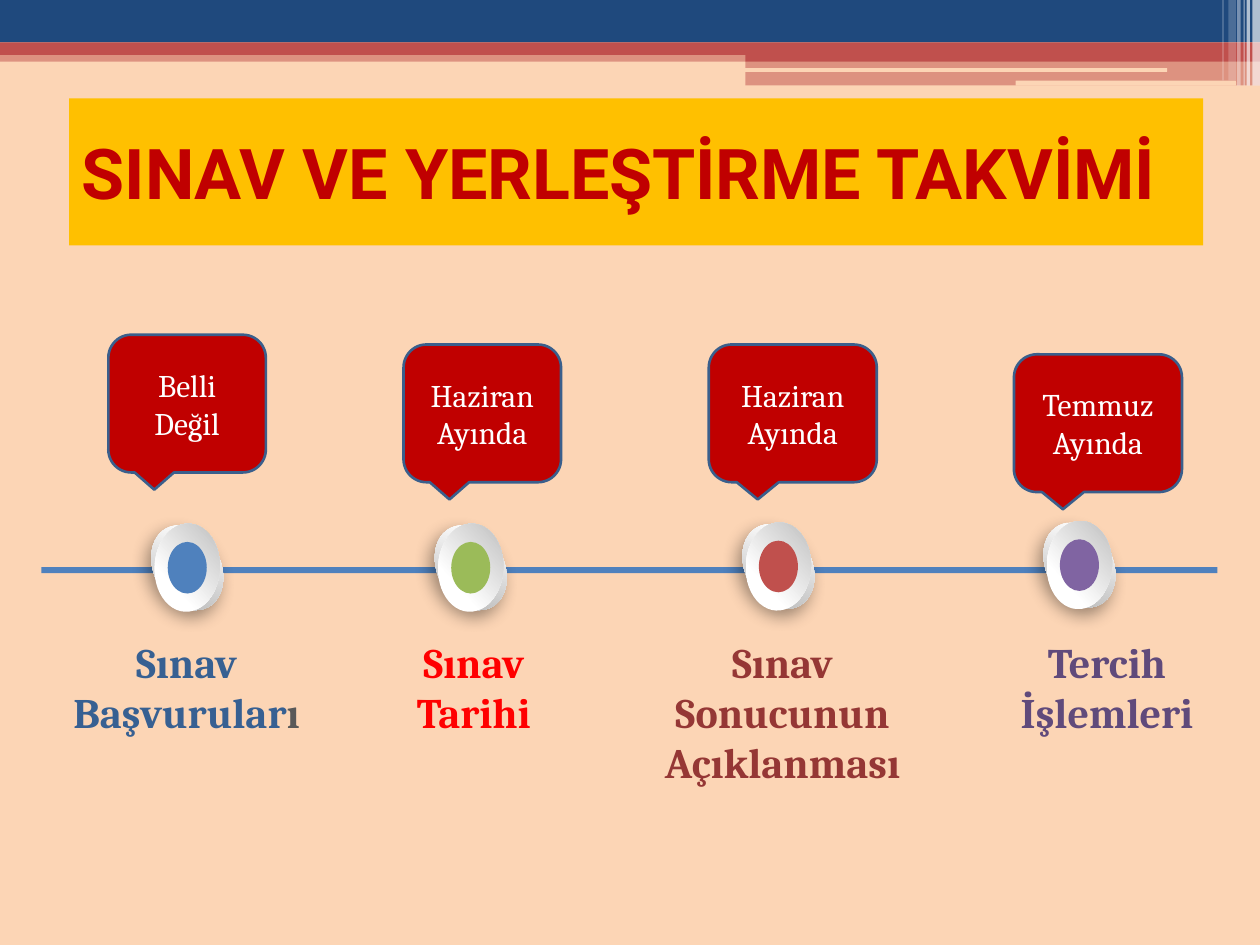
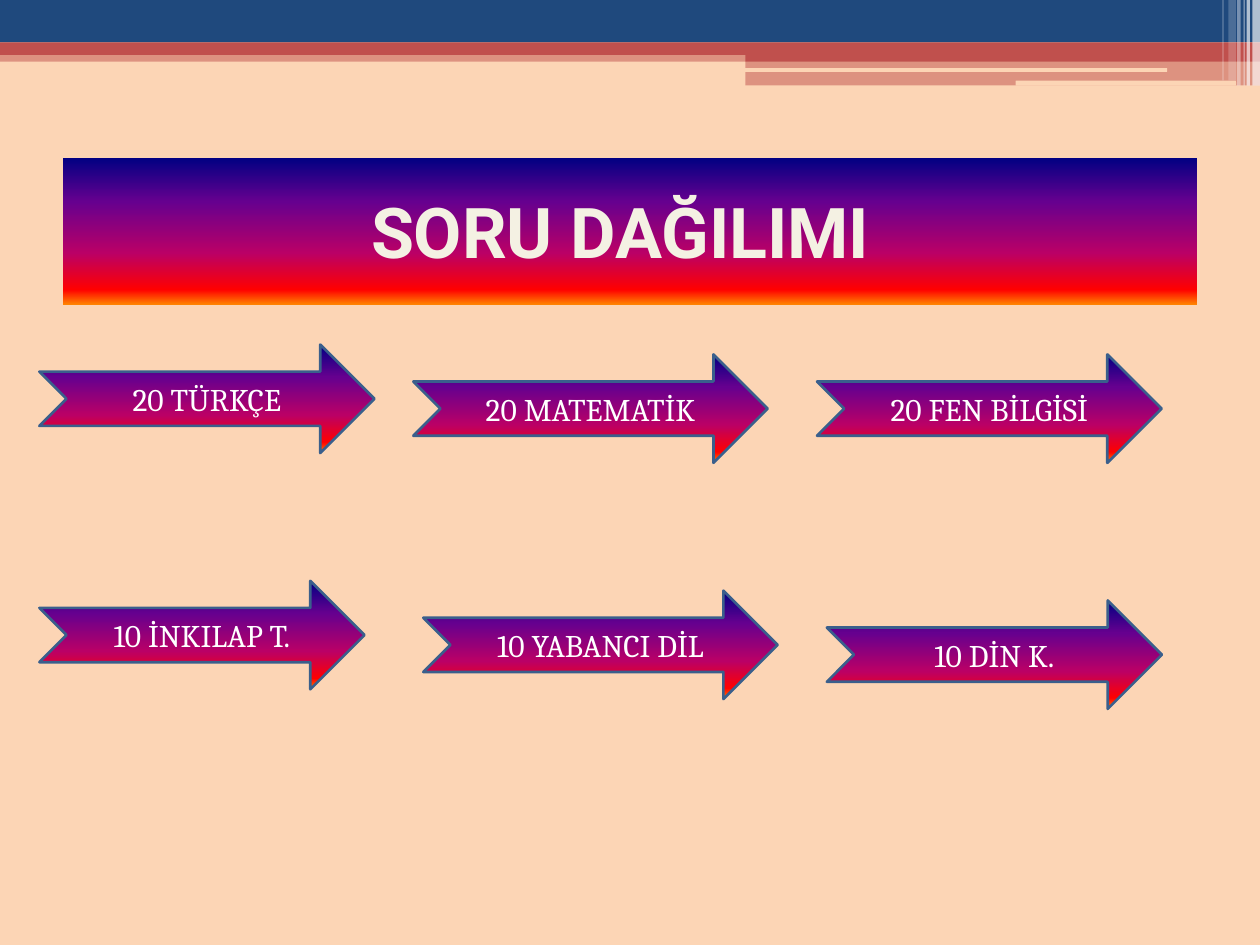
from lxml.etree import SubElement
from pptx import Presentation
from pptx.dml.color import RGBColor
from pptx.enum.shapes import MSO_SHAPE
from pptx.enum.text import MSO_ANCHOR, MSO_AUTO_SIZE, PP_ALIGN
from pptx.oxml.ns import qn
from pptx.util import Pt

RECT, ROUND = MSO_SHAPE.RECTANGLE, MSO_SHAPE.ROUNDED_RECTANGLE
OVAL = MSO_SHAPE.OVAL
CALL = MSO_SHAPE.ROUNDED_RECTANGULAR_CALLOUT
ARROW = MSO_SHAPE.NOTCHED_RIGHT_ARROW
LEFT, CENTER = PP_ALIGN.LEFT, PP_ALIGN.CENTER
MIDDLE, GROW = MSO_ANCHOR.MIDDLE, MSO_AUTO_SIZE.SHAPE_TO_FIT_TEXT

PEACH, NAVY, BRICK, WHITE = "FCD5B5", "1F497D", "C0504D", "FFFFFF"
BLUE, EDGE, RED, GOLD = "4F81BD", "3A5F8C", "C00000", "FFC000"
SUNSET = [(0, "000082"), (30, "66008F"), (65, "BA0066"),
          (90, "FF0000"), (100, "FF8200")]


def tint(item, hue, angle=90):
    """Fill a shape, line, font or background: a hex string or a list of stops."""
    if isinstance(hue, str):
        item.fill.solid()
        item.fill.fore_color.rgb = RGBColor.from_string(hue)
        return
    item.fill.gradient()
    item.fill.gradient_angle = 360 - angle
    stops = item.element.spPr.find(qn("a:gradFill")).find(qn("a:gsLst"))
    for old in list(stops):
        stops.remove(old)
    for spot, code in hue:
        stop = SubElement(stops, qn("a:gs"), pos=str(spot * 1000))
        SubElement(stop, qn("a:srgbClr"), val=code)


def plate(shapes, kind, box, hue, angle=90):
    """Add a filled shape without line or shadow."""
    shape = shapes.add_shape(kind, *[Pt(n) for n in box])
    shape.shadow.inherit = False
    shape.line.fill.background()
    tint(shape, hue, angle)
    return shape


prs = Presentation()
prs.slide_width, prs.slide_height = Pt(720), Pt(540)
master = prs.slide_master
tint(master.background, PEACH)
dates, topics = [prs.slides.add_slide(prs.slide_layouts[5]) for _ in range(2)]

# Bands at the top, moved to the master so that both slides share them
bands = [
    (RECT, (0, 28.8, 720, 6.5), BRICK, 50),
    (RECT, (0, 0, 720, 24.2), NAVY, 100),
    (RECT, (0, 24.2, 720, 7.2), BRICK, 100),
    (RECT, (426, 28.1, 294, 7.2), BRICK, 100),
    (RECT, (426, 35.3, 294, 13.5), BRICK, 50),
    (ROUND, (425.5, 38.9, 241.5, 2.2), PEACH, 100),
    (ROUND, (580.3, 46.1, 126, 2.9), PEACH, 100),
]
for left, width, height, alpha in [
        (715.7, 4.3, 49, 65), (712.3, 2, 49, 65), (710.6, 0.7, 49, 60),
        (707, 2, 49, 40), (702, 4.3, 46, 20), (698.5, 0.7, 46, 30)]:
    bands.append((RECT, (left, 0, width, height), WHITE, alpha))
for i, (kind, box, hue, alpha) in enumerate(bands):
    band = plate(dates.shapes, kind, box, hue)
    if alpha < 100:
        color = band.element.spPr.find(qn("a:solidFill"))[0]
        SubElement(color, qn("a:alpha"), val=str(alpha * 1000))
    band.element.nvSpPr.cNvPr.set("id", str(20 + i))
    master.shapes.element.insert(2 + i, band.element)

# Titles
for slide, text, left, top, inset, hue, ink in [
        (dates, "SINAV VE YERLEŞTİRME TAKVİMİ", 39.5, 56.2, 7.2, GOLD, RED),
        (topics, "SORU DAĞILIMI", 36, 90, 176, SUNSET, "F4F1E3")]:
    title = slide.shapes.title
    title.left, title.top = Pt(left), Pt(top)
    title.width, title.height = Pt(648), Pt(84)
    tint(title, hue)
    frame = title.text_frame
    frame.text, frame.margin_left = text, Pt(inset)
    frame.vertical_anchor = MIDDLE
    para = frame.paragraphs[0]
    para.alignment = LEFT
    para.font.name, para.font.size, para.font.bold = "Roboto", Pt(40), True
    tint(para.font, ink)

# Time line with its markers
plate(dates.shapes, RECT, (23.7, 324, 672, 3.5), BLUE)
for x, y, hue in [(107, 324.4, BLUE), (269, 324.4, "9BBB59"),
                  (444.8, 323.7, BRICK), (616.8, 322.9, "8064A2")]:
    mark = dates.shapes.add_group_shape().shapes
    discs = []
    for wide, high, turn, tone in [
            (51, 38, 62.3, [(17, WHITE), (88, "B8B8B8")]),
            (50.4, 37.4, 273, [(29, WHITE), (98, "BFBFBF")]),
            (22.3, 29.5, 0, hue)]:
        disc = plate(mark, OVAL, (x - wide / 2, y - high / 2, wide, high), tone, 45)
        disc.rotation = turn
        discs.append(disc)
    glow = SubElement(discs[0].element.spPr.find(qn("a:effectLst")),
                      qn("a:outerShdw"), blurRad=str(Pt(10)), dist=str(Pt(5)),
                      dir=str(123 * 60000), algn="ctr", rotWithShape="0")
    color = SubElement(glow, qn("a:srgbClr"), val="000000")
    SubElement(color, qn("a:alpha"), val="39000")

# Labels below the time line
for left, width, high, runs in [
        (22.3, 168.5, 65.5, [("Sınav Başvurular", "376092"), ("ı", "595959")]),
        (213.8, 113.8, 65.5, [("Sınav Tarihi", "FF0000")]),
        (360, 174.2, 94.5, [("Sınav Sonucunun Açıklanması", "953735")]),
        (562.3, 140.4, 65.5, [("Tercih İşlemleri", "604A7B")])]:
    label = dates.shapes.add_textbox(Pt(left), Pt(360), Pt(width), Pt(high))
    frame = label.text_frame
    frame.word_wrap, frame.auto_size = True, GROW
    para = frame.paragraphs[0]
    para.alignment = CENTER
    para.font.name, para.font.size, para.font.bold = "Cambria", Pt(24), True
    for text, hue in runs:
        run = para.add_run()
        run.text = text
        tint(run.font, hue)

# Callouts with the dates, arrows with the question counts
calls = [(61.9, 191.3, 90, "Belli Değil"), (230.6, 196.9, 90, "Haziran Ayında"),
         (405, 196.9, 96, "Haziran Ayında"), (579.4, 202.5, 96, "Temmuz Ayında")]
arrows = [(22.5, 196.9, 191.5, "20 TÜRKÇE"), (236.2, 202.5, 202.5, "20 MATEMATİK"),
          (466.9, 202.5, 196.9, "20 FEN BİLGİSİ"), (22.5, 331.9, 185.8, "10 İNKILAP T."),
          (241.9, 337.5, 202.5, "10 YABANCI DİL"), (472.5, 343.1, 191.5, "10 DİN K.")]
for slide, kind, high, hue, boxes in [(dates, CALL, 78.7, RED, calls),
                                      (topics, ARROW, 62, SUNSET, arrows)]:
    for left, top, width, text in boxes:
        shape = plate(slide.shapes, kind, (left, top, width, high), hue)
        tint(shape.line, EDGE)
        shape.line.width = Pt(1.5)
        frame = shape.text_frame
        frame.text, frame.vertical_anchor = text, MIDDLE
        para = frame.paragraphs[0]
        para.alignment = CENTER
        para.font.name, para.font.size = "Cambria", Pt(18)
        tint(para.font, WHITE)

prs.save("out.pptx")
